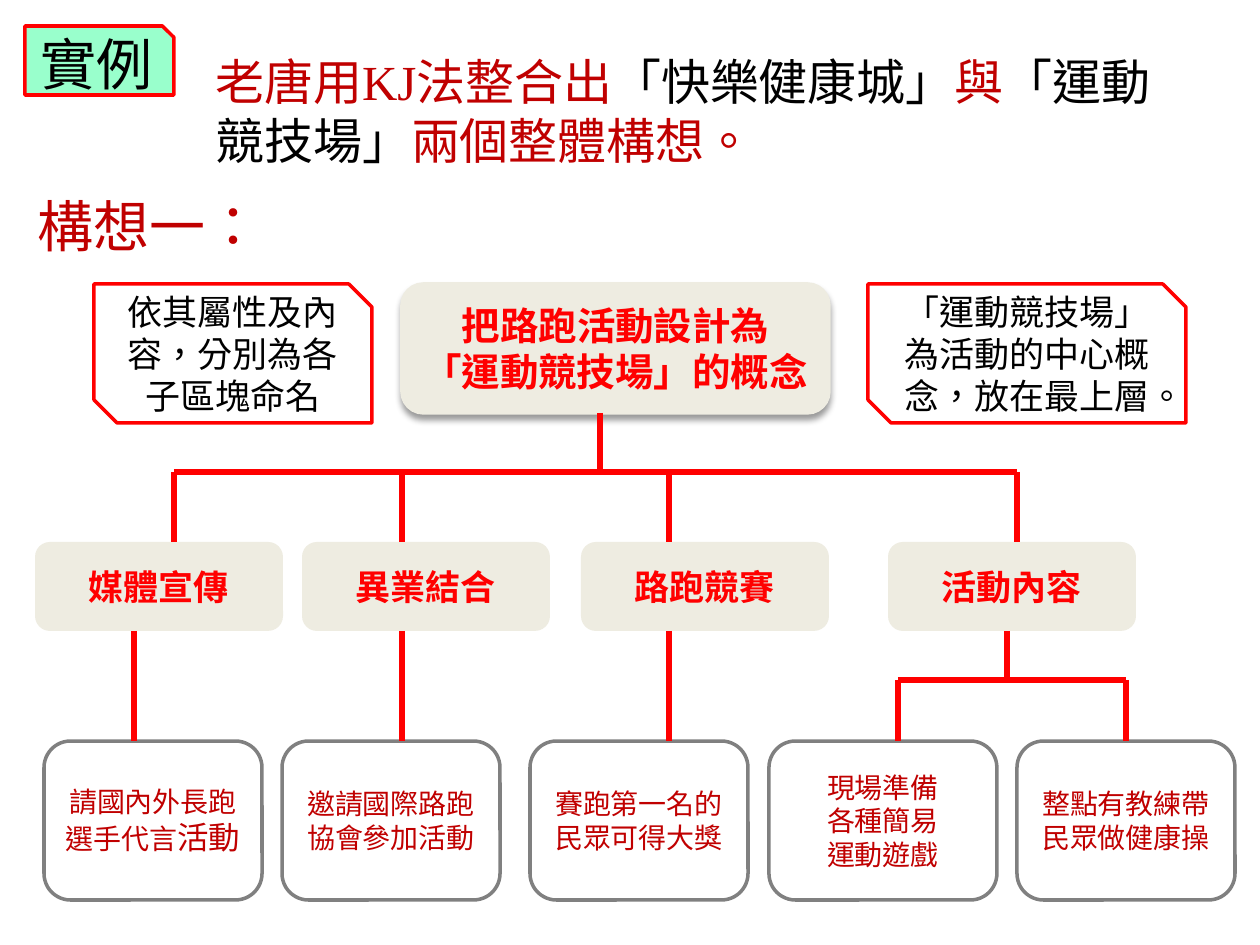
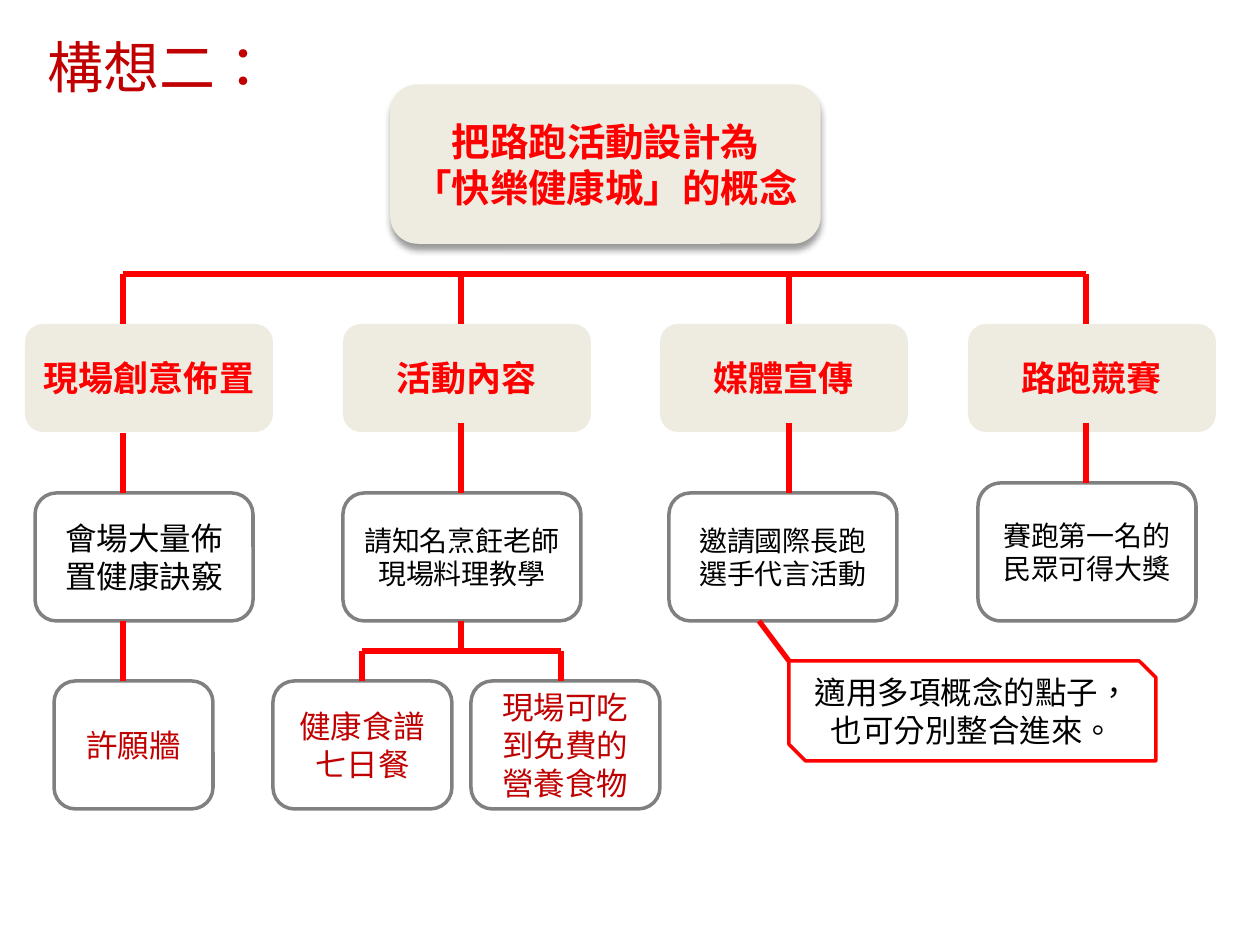
from lxml import etree
from pptx import Presentation
from pptx.dml.color import RGBColor
from pptx.enum.shapes import MSO_CONNECTOR, MSO_SHAPE
from pptx.enum.text import MSO_ANCHOR, MSO_AUTO_SIZE, PP_ALIGN
from pptx.oxml.ns import qn
from pptx.util import Emu, Pt

PX_PER_INCH = 126
EMU_PER_INCH = 914400
TITLE_ONLY = 5

RED = RGBColor(0xFF, 0x00, 0x00)
DARK_RED = RGBColor(0xC0, 0x00, 0x00)
BLACK = RGBColor(0x00, 0x00, 0x00)
GRAY = RGBColor(0x80, 0x80, 0x80)
CREAM = RGBColor(0xEE, 0xEC, 0xE1)
MINT = RGBColor(0x99, 0xFF, 0xCC)

BODY_FONT = "Calibri"
LABEL_FONT = "Noto Sans CJK SC"
KJ_FONT = "Times New Roman"

ROUNDED = MSO_SHAPE.ROUNDED_RECTANGLE
SNIPPED = MSO_SHAPE.SNIP_1_RECTANGLE
NOTE = MSO_SHAPE.SNIP_2_DIAG_RECTANGLE
STRAIGHT = MSO_CONNECTOR.STRAIGHT
TOP, MIDDLE = MSO_ANCHOR.TOP, MSO_ANCHOR.MIDDLE
LEFT, CENTER = PP_ALIGN.LEFT, PP_ALIGN.CENTER
NO_AUTOFIT = MSO_AUTO_SIZE.NONE


def px(*lengths):
    """Turn pixel lengths into a list of EMU lengths."""
    return [Emu(round(n * EMU_PER_INCH / PX_PER_INCH)) for n in lengths]


def format_span(span, size, color, font=BODY_FONT, bold=False):
    """Give one run its size, colour and Latin and East Asian fonts."""
    span.font.size = Pt(size)
    span.font.color.rgb = color
    span.font.name = font
    span.font.bold = bold
    properties = span.font._element
    properties.set("lang", "zh-TW")
    east_asian = etree.Element(qn("a:ea"), typeface=BODY_FONT)
    properties.find(qn("a:latin")).addnext(east_asian)


def write(frame, text, align=CENTER, anchor=MIDDLE, **style):
    """Fill a frame; text is a string or paragraphs of (text, style) spans."""
    frame.word_wrap = True
    frame.auto_size = NO_AUTOFIT
    frame.vertical_anchor = anchor
    paragraphs = text.split("\n") if isinstance(text, str) else text
    for index, spans in enumerate(paragraphs):
        para = frame.add_paragraph() if index else frame.paragraphs[0]
        para.alignment = align
        if isinstance(spans, str):
            spans = [(spans, {})]
        for words, changes in spans:
            span = para.add_run()
            span.text = words
            format_span(span, **{**style, **changes})


def add_title(page, text, left, top):
    """Place and fill the title placeholder."""
    title = page.shapes.title
    title.left, title.top, title.width, title.height = px(left, top, 256, 81)
    write(title.text_frame, text, LEFT, TOP, size=32, color=DARK_RED)


def add_box(page, kind, at, text, fill=None, line=None, **style):
    """Draw a preset shape with centred text."""
    box = page.shapes.add_shape(kind, *px(*at))
    box.shadow.inherit = False
    if fill:
        box.fill.solid()
        box.fill.fore_color.rgb = fill
    else:
        box.fill.background()
    if line:
        box.line.color.rgb = line
        box.line.width = Pt(2)
    else:
        box.line.fill.background()
    write(box.text_frame, text, **style)
    return box


def add_root(page, at, text):
    """Draw the central concept with its soft shadow."""
    box = add_box(page, ROUNDED, at, text, CREAM, CREAM,
                  size=22, color=RED, font=LABEL_FONT, bold=True)
    effects = box._element.spPr.find(qn("a:effectLst"))
    shadow = etree.SubElement(effects, qn("a:outerShdw"), blurRad=str(Pt(4)),
                              dist=str(Pt(3)), dir="5400000", rotWithShape="0")
    tint = etree.SubElement(shadow, qn("a:srgbClr"), val=str(BLACK))
    etree.SubElement(tint, qn("a:alpha"), val="40000")


def add_branches(page, top, height, branches):
    """Draw a row of category boxes from (left, text) pairs."""
    for left, text in branches:
        add_box(page, ROUNDED, (left, top, 248, height), text, CREAM,
                size=20, color=RED, bold=True)


def add_idea(page, at, text, color=DARK_RED, size=16, font=BODY_FONT):
    """Draw a grey-outlined idea box."""
    add_box(page, ROUNDED, at, text, line=GRAY, size=size, color=color, font=font)


def add_note(page, at, text, size=20):
    """Draw a red-outlined remark."""
    add_box(page, NOTE, at, text, line=RED, size=size, color=BLACK)


def add_link(page, x1, y1, x2, y2):
    """Draw a red line without a shadow."""
    link = page.shapes.add_connector(STRAIGHT, *px(x1, y1, x2, y2))
    link.line.color.rgb = RED
    link.line.width = Pt(3)
    etree.SubElement(link._element.spPr, qn("a:effectLst"))


def add_fork(page, bar, bottom, drops, stem=None):
    """Draw a bar with a drop at each x and an optional (x, top) stem."""
    add_link(page, drops[0], bar, drops[-1], bar)
    for x in drops:
        add_link(page, x, bar, x, bottom)
    if stem:
        x, top = stem
        add_link(page, x, top, x, bar)


def build_arena(page):
    """Build the first concept, the sports arena."""
    add_title(page, "構想一：", 25, 185)
    add_box(page, SNIPPED, (25, 26, 149, 69), "實例", MINT, RED,
            size=32, color=BLACK, font=LABEL_FONT)
    intro = page.shapes.add_textbox(*px(203, 45, 973, 131))
    black = {"color": BLACK}
    sentence = [("老唐用", {}), ("KJ法整合出", {"font": KJ_FONT}),
                ("「快樂健康城」", black), ("與", {}),
                ("「運動競技場」", black), ("兩個整體構想。", {})]
    write(intro.text_frame, [sentence], LEFT, TOP, size=28, color=DARK_RED)

    add_root(page, (402, 284, 427, 129), "把路跑活動設計為\n「運動競技場」的概念")
    add_note(page, (94, 284, 278, 139), "依其屬性及內容，分別為各子區塊命名")
    add_note(page, (868, 284, 318, 139),
             "「運動競技場」為活動的中心概念，放在最上層。")
    add_branches(page, 542, 89, [(35, "媒體宣傳"), (302, "異業結合"),
                                 (581, "路跑競賽"), (888, "活動內容")])
    endorsement = [[("請國內外長跑", {})],
                   [("選手代言", {}), ("活動", {"size": 18})]]
    ideas = [(44, 218, endorsement),
             (282, 218, "邀請國際路跑\n協會參加活動"),
             (530, 218, "賽跑第一名的民眾可得大獎"),
             (769, 228, "現場準備\n各種簡易\n運動遊戲"),
             (1017, 218, "整點有教練帶民眾做健康操")]
    for left, width, text in ideas:
        add_idea(page, (left, 741, width, 159), text)

    add_fork(page, 472, 542, [174, 402, 669, 1017], stem=(600, 413))
    for x in (134, 402, 669):
        add_link(page, x, 631, x, 741)
    add_fork(page, 680, 741, [898, 1126], stem=(1007, 631))


def build_health_city(page):
    """Build the second concept, the happy health city."""
    add_title(page, "構想二：", 35, 26)
    add_root(page, (392, 86, 427, 156), "把路跑活動設計為\n「快樂健康城」的概念")
    add_branches(page, 324, 108, [(25, "現場創意佈置"), (343, "活動內容"),
                                  (660, "媒體宣傳"), (968, "路跑競賽")])
    add_idea(page, (35, 493, 218, 128), "會場大量佈置健康訣竅", BLACK, 18)
    add_idea(page, (343, 493, 238, 128), "請知名烹飪老師現場料理教學", BLACK)
    add_idea(page, (669, 493, 228, 128), "邀請國際長跑\n選手代言活動", BLACK)
    add_idea(page, (978, 483, 218, 138), "賽跑第一名的民眾可得大獎", BLACK)
    add_idea(page, (54, 681, 159, 128), "許願牆", size=18, font="Arial")
    add_idea(page, (273, 681, 179, 128), "健康食譜七日餐", size=18)
    add_idea(page, (471, 681, 189, 128), "現場可吃到免費的營養食物", size=18)
    add_note(page, (789, 661, 367, 100),
             "適用多項概念的點子，也可分別整合進來。", size=18)

    add_fork(page, 274, 324, [123, 461, 789, 1086])
    for x, top, bottom in [(123, 433, 493), (461, 423, 493), (789, 423, 493),
                           (1086, 423, 483), (123, 621, 681)]:
        add_link(page, x, top, x, bottom)
    add_fork(page, 651, 681, [362, 561], stem=(461, 621))
    add_link(page, 759, 621, 789, 661)


def main():
    """Build and save the deck."""
    deck = Presentation()
    deck.slide_width, deck.slide_height = px(1260, 945)
    for build in (build_arena, build_health_city):
        build(deck.slides.add_slide(deck.slide_layouts[TITLE_ONLY]))
    deck.save("out.pptx")


if __name__ == "__main__":
    main()
